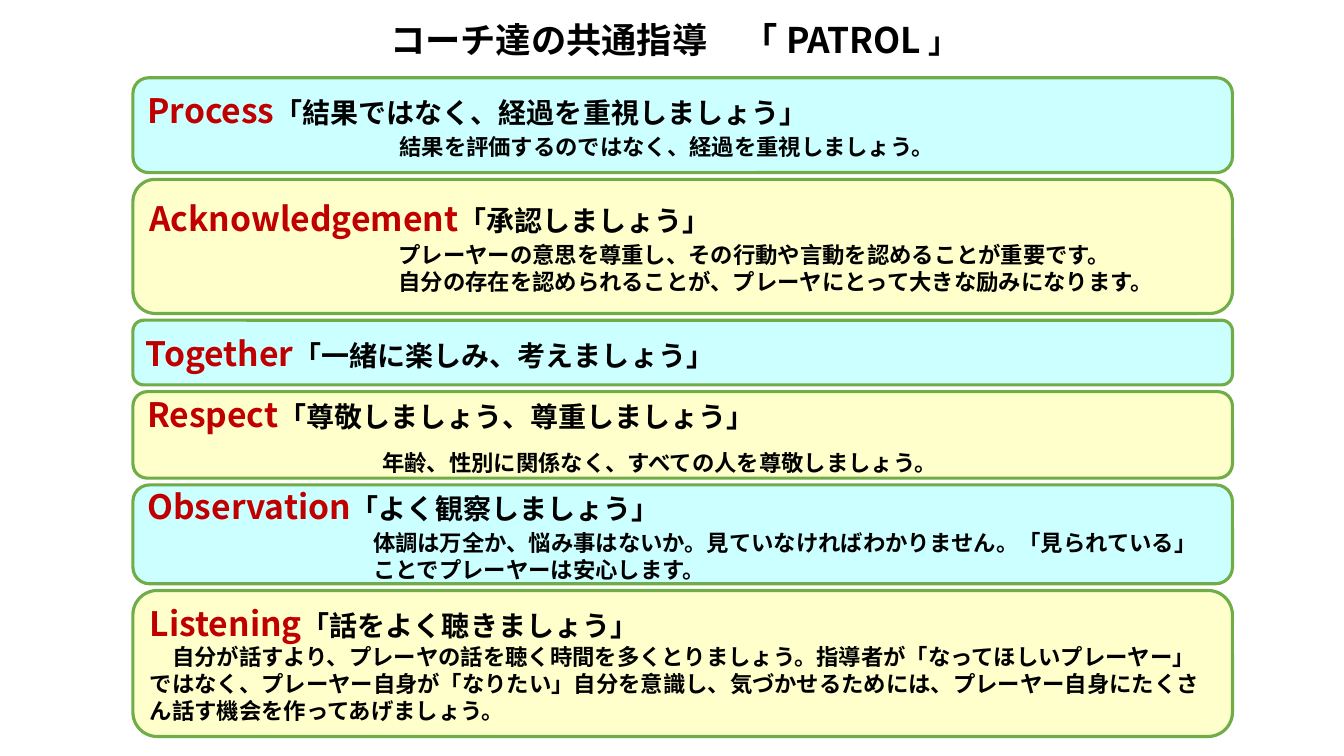
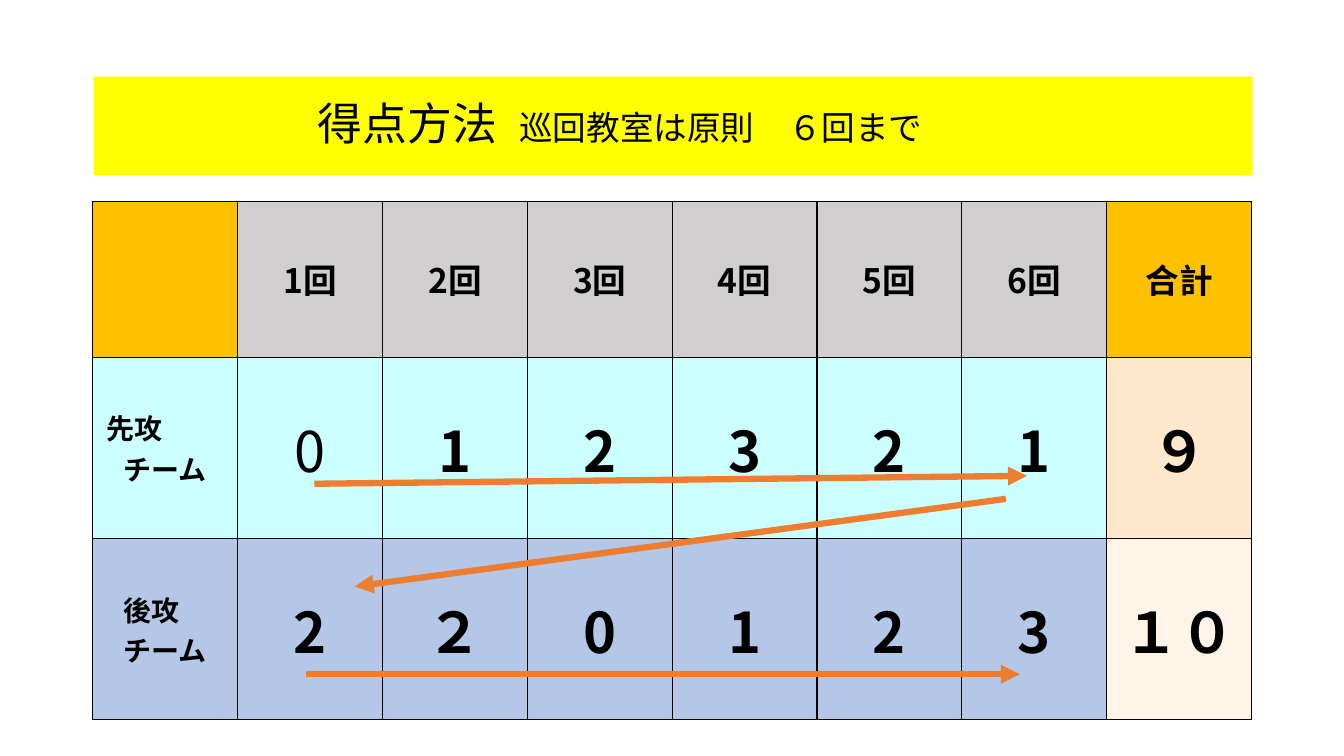
"""Build two slides on shared coaching principles and the scoring method."""
from lxml import etree
from pptx import Presentation
from pptx.dml.color import RGBColor
from pptx.enum.shapes import MSO_CONNECTOR, MSO_SHAPE
from pptx.enum.text import MSO_ANCHOR, PP_ALIGN
from pptx.oxml.ns import qn
from pptx.util import Cm, Pt

FONT = "Noto Sans CJK JP"
BLACK, RED, GREEN, ORANGE = "000000", "C00000", "70AD47", "ED7D31"
CYAN, CREAM, YELLOW, AMBER = "CCFFFF", "FFFFCC", "FFFF00", "FFC000"
GREY, BLUE, PEACH, IVORY = "D0CECE", "B4C7E7", "FFE8CC", "FFF4E7"
CENTER, LEFT = PP_ALIGN.CENTER, PP_ALIGN.LEFT
MIDDLE = MSO_ANCHOR.MIDDLE
ROUNDED, RECTANGLE = MSO_SHAPE.ROUNDED_RECTANGLE, MSO_SHAPE.RECTANGLE
STRAIGHT = MSO_CONNECTOR.STRAIGHT


def paint(fill, colour):
    """Give a shape, line, cell or font fill a solid colour."""
    fill.solid()
    fill.fore_color.rgb = RGBColor.from_string(colour)


def write(para, text, size, colour=BLACK, bold=True, align=LEFT, margin=0, first=0):
    """Fill a paragraph with text; margin and first-line indent are in cm."""
    para.alignment = align
    para.font.name = FONT
    para.font.size = Pt(size)
    para.font.bold = bold
    paint(para.font.fill, colour)
    properties = para._p.get_or_add_pPr()
    properties.set("marL", str(Cm(margin)))
    properties.set("indent", str(Cm(first)))
    east_asian = etree.SubElement(properties.find(qn("a:defRPr")), qn("a:ea"))
    east_asian.set("typeface", FONT)
    para.add_run().text = text


deck = Presentation()
deck.slide_width, deck.slide_height = Cm(33.87), Cm(19.05)
blank = deck.slide_layouts[6]

page = deck.slides.add_slide(blank)
box = page.shapes.add_textbox(Cm(3.35), Cm(0.56), Cm(27.28), Cm(1.02))
box.text_frame.word_wrap = True
box.text_frame.vertical_anchor = MIDDLE
para = box.text_frame.paragraphs[0]
write(para, "コーチ達の共通指導　「 PATROL", 25.2, align=CENTER)
para.line_spacing = 0.9
span = para.add_run()
span.text = " 」"
span.font.size = Pt(21.6)

# Each principle: height, keyword, motto, body margin, first indent, gap, body.
principles = [
    (2.39, "Process", "「結果ではなく、経過を重視しましょう」", 6.35, 0, 2,
     ["結果を評価するのではなく、経過を重視しましょう。"]),
    (3.38, "Acknowledgement", "「承認しましょう」", 6.28, 0, 2,
     ["プレーヤーの意思を尊重し、その行動や言動を認めることが重要です。",
      "自分の存在を認められることが、プレーヤにとって大きな励みになります。"]),
    (1.63, "Together", "「一緒に楽しみ、考えましょう」", 0, 0, 0, []),
    (2.18, "Respect", "「尊敬しましょう、尊重しましょう」", 5.93, 0, 10,
     ["年齢、性別に関係なく、すべての人を尊敬しましょう。"]),
    (2.49, "Observation", "「よく観察しましょう」", 5.68, 0, 2,
     ["体調は万全か、悩み事はないか。見ていなければわかりません。「見られている」",
      "ことでプレーヤーは安心します。"]),
    (3.68, "Listening", "「話をよく聴きましょう」", 0, 0.56, 0,
     ["自分が話すより、プレーヤの話を聴く時間を多くとりましょう。"
      "指導者が「なってほしいプレーヤー」ではなく、プレーヤー自身が「なりたい」"
      "自分を意識し、気づかせるためには、プレーヤー自身にたくさん話す機会を"
      "作ってあげましょう。"]),
]
top = 1.96
for index, (height, keyword, motto, margin, first, gap, body) in enumerate(principles):
    box = page.shapes.add_shape(ROUNDED, Cm(3.35), Cm(top), Cm(27.71), Cm(height))
    box.shadow.inherit = False
    paint(box.fill, (CYAN, CREAM)[index % 2])
    paint(box.line.fill, GREEN)
    box.line.width = Pt(2.25)
    frame = box.text_frame
    frame.word_wrap = True
    frame.vertical_anchor = MIDDLE
    para = frame.paragraphs[0]
    write(para, keyword, 24, RED)
    span = para.add_run()
    span.text = motto
    span.font.size = Pt(20)
    paint(span.font.fill, BLACK)
    for number, line in enumerate(body):
        para = frame.add_paragraph()
        write(para, line, 16, margin=margin, first=first)
        para.space_before = Pt(0 if number else gap)
    top += height + 0.17

page = deck.slides.add_slide(blank)
column_width, row_heights = 3.65, (3.92, 4.57, 4.57)
innings = [f"{number}回" for number in range(1, 7)]
scores = [
    ["", *innings, "合計"],
    ["先攻", "0", "1", "2", "3", "2", "1", "９"],
    ["後攻", "2", "２", "0", "1", "2", "3", "１０"],
]
row_fills = [(AMBER, GREY, AMBER), (CYAN, CYAN, PEACH), (BLUE, BLUE, IVORY)]
team_margins = (0, 0.1, 0.51)
table = page.shapes.add_table(3, 8, Cm(2.34), Cm(5.08), Cm(column_width * 8),
                              Cm(sum(row_heights))).table
for column in table.columns:
    column.width = Cm(column_width)
for row, (values, fills) in enumerate(zip(scores, row_fills)):
    table.rows[row].height = Cm(row_heights[row])
    for column, value in enumerate(values):
        cell = table.cell(row, column)
        cell.vertical_anchor = MIDDLE
        for side in ("a:lnL", "a:lnR", "a:lnT", "a:lnB"):
            border = etree.SubElement(cell._tc.get_or_add_tcPr(), qn(side), w=str(Pt(1)))
            solid = etree.SubElement(border, qn("a:solidFill"))
            etree.SubElement(solid, qn("a:srgbClr"), val=BLACK)
        paint(cell.fill, fills[0 if column == 0 else 2 if column == 7 else 1])
        para = cell.text_frame.paragraphs[0]
        if column:
            write(para, value, 40 if row else 24, bold=(row, column) != (1, 1), align=CENTER)
        elif value:
            write(para, value, 20, margin=team_margins[row])
            write(cell.text_frame.add_paragraph(), "チーム", 20, margin=0.51)

banner = page.shapes.add_shape(RECTANGLE, Cm(2.36), Cm(1.93), Cm(29.21), Cm(2.49))
banner.shadow.inherit = False
paint(banner.fill, YELLOW)
banner.line.fill.background()
frame = banner.text_frame
frame.word_wrap = True
frame.vertical_anchor = MIDDLE
frame.margin_left = Cm(5.65)
para = frame.paragraphs[0]
write(para, "得点方法\t", 32, bold=False)
para.line_spacing = 0.9
tabs = etree.Element(qn("a:tabLst"))
etree.SubElement(tabs, qn("a:tab"), pos=str(Cm(6.78)), algn="l")
para._p.pPr.find(qn("a:defRPr")).addprevious(tabs)
span = para.add_run()
span.text = "巡回教室は原則　６回まで"
span.font.size = Pt(24)

arrows = [
    (7.92, 12.19, 25.88, 11.99),
    (7.72, 16.99, 25.7, 16.99),
    (25.35, 12.57, 8.94, 14.78),
]
for ends in arrows:
    arrow = page.shapes.add_connector(STRAIGHT, *map(Cm, ends))
    paint(arrow.line.fill, ORANGE)
    arrow.line.width = Pt(4.5)
    etree.SubElement(arrow.line._get_or_add_ln(), qn("a:tailEnd"), type="triangle")
    etree.SubElement(arrow._element.spPr, qn("a:effectLst"))

deck.save("out.pptx")
